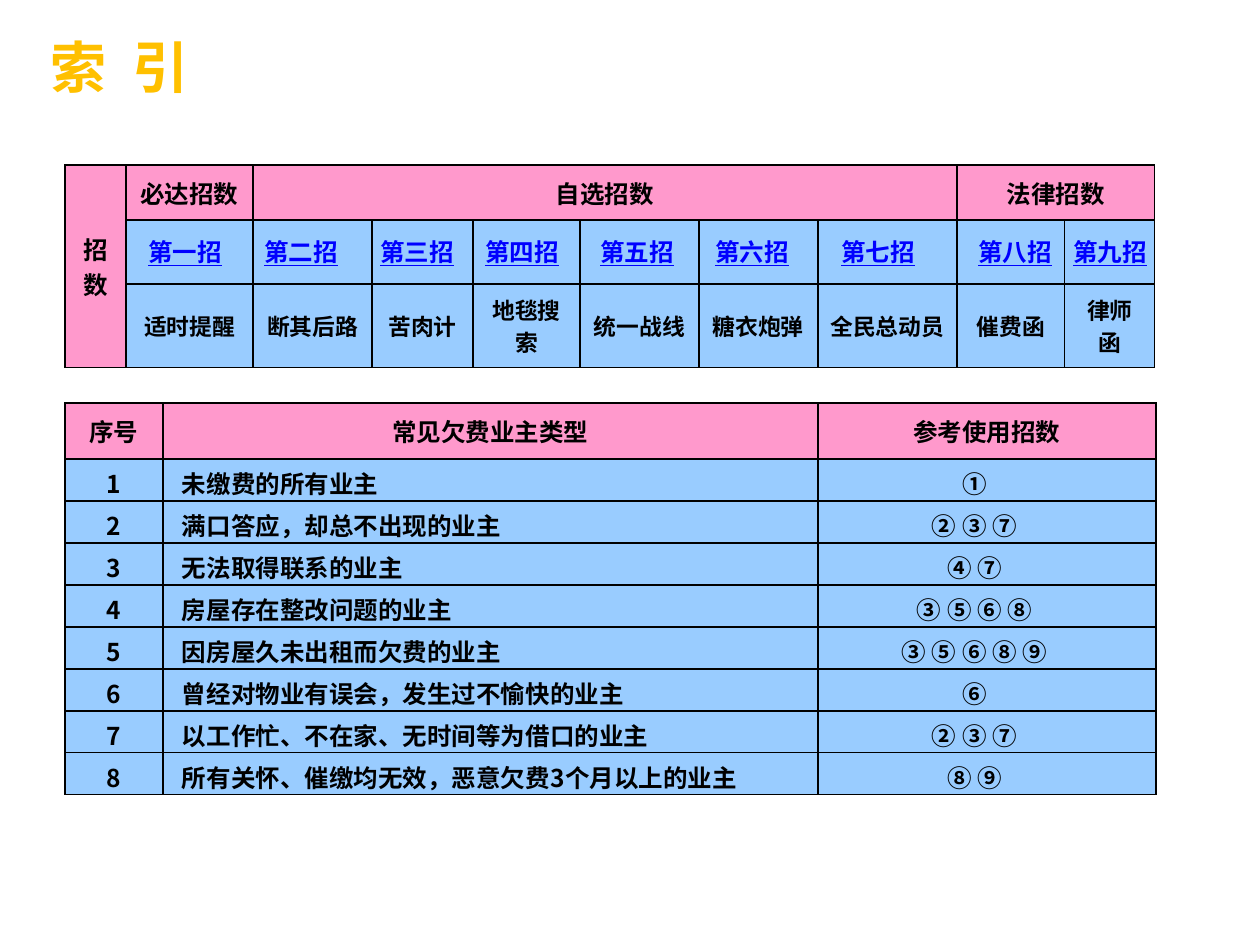
from lxml.etree import SubElement
from pptx import Presentation
from pptx.dml.color import RGBColor
from pptx.enum.text import MSO_ANCHOR as Anchor, MSO_AUTO_SIZE as AutoSize, PP_ALIGN as Align
from pptx.oxml.ns import qn
from pptx.util import Pt

EMU_PER_PX = 914400 / 126
COLORS = {"ink": "000000", "head": "FF99CC", "body": "99CCFF", "link": "0000FF", "title": "FFC000"}
CJK, LATIN = "Noto Sans CJK SC", "Times New Roman"
HEAD = {"color": "head"}
PAD = {"margin_left": 12, "margin_right": 12, "margin_top": 6, "margin_bottom": 6}

MOVES = ["适时提醒", "断其后路", "苦肉计", "地毯搜索", "统一战线",
         "糖衣炮弹", "全民总动员", "催费函", "律师函"]
LINKS = {"第一招": 136, "第二招": 252, "第三招": 368, "第四招": 473, "第五招": 588,
         "第六招": 703, "第七招": 829, "第八招": 966, "第九招": 1061}
OWNERS = [
    ("未缴费的所有业主", "①"),
    ("满口答应，却总不出现的业主", "② ③ ⑦"),
    ("无法取得联系的业主", "④ ⑦"),
    ("房屋存在整改问题的业主", "③ ⑤ ⑥ ⑧"),
    ("因房屋久未出租而欠费的业主", "③ ⑤ ⑥ ⑧ ⑨"),
    ("曾经对物业有误会，发生过不愉快的业主", "⑥"),
    ("以工作忙、不在家、无时间等为借口的业主", "② ③ ⑦"),
    ("所有关怀、催缴均无效，恶意欠费3个月以上的业主", "⑧ ⑨"),
]


def px(n):
    return round(n * EMU_PER_PX)


def rgb(name):
    return RGBColor.from_string(COLORS[name])


def set_margins(obj, margins):
    for name, value in margins.items():
        setattr(obj, name, px(value))


def write(tf, text, size=14, color="ink", latin=CJK, align=Align.CENTER, underline=False):
    p = tf.paragraphs[0]
    p.alignment = align
    r = p.add_run()
    r.text = text
    formats = {"size": Pt(size), "bold": True, "name": latin, "underline": underline}
    for name, value in formats.items():
        setattr(r.font, name, value)
    r.font.color.rgb = rgb(color)
    rPr = r.font._element
    SubElement(rPr, qn("a:ea")).set("typeface", CJK)
    return rPr


def add_borders(cell):
    tcPr = cell._tc.get_or_add_tcPr()
    for side in ("lnL", "lnR", "lnT", "lnB"):
        ln = SubElement(tcPr, qn(f"a:{side}"), w=str(Pt(1)))
        fill = SubElement(ln, qn("a:solidFill"))
        SubElement(fill, qn("a:srgbClr"), val=COLORS["ink"])


def add_grid(slide, left, top, cols, rows):
    """Add a bordered table filled with the body colour."""
    table = slide.shapes.add_table(len(rows), len(cols), px(left), px(top),
                                   px(sum(cols)), px(sum(rows))).table
    for col, width in zip(table.columns, cols):
        col.width = px(width)
    for row, height in zip(table.rows, rows):
        row.height = px(height)
    for cell in table.iter_cells():
        add_borders(cell)
        paint(cell, "body")
        cell.vertical_anchor = Anchor.MIDDLE
        set_margins(cell, PAD)
    return table


def paint(cell, color):
    cell.fill.solid()
    cell.fill.fore_color.rgb = rgb(color)


def add_title(slide, left, top, width, height):
    s = slide.shapes.title
    s.left, s.top, s.width, s.height = map(px, (left, top, width, height))
    tf = s.text_frame
    tf.auto_size, tf.vertical_anchor = AutoSize.NONE, Anchor.MIDDLE
    set_margins(tf, {**PAD, "margin_left": 50})
    write(tf, "索 引", 32, "title", LATIN, Align.LEFT).set("spc", "400")


def add_moves(slide, left, top):
    cols = [61, 127, 119, 101, 107, 119, 119, 139, 108, 90]
    table = add_grid(slide, left, top, cols, [55, 64, 79])
    heads = [("招数", 0, 2, 0), ("必达招数", 1, 0, 1), ("自选招数", 2, 0, 7), ("法律招数", 8, 0, 9)]
    for text, first, last_row, last in heads:
        cell = table.cell(0, first)
        if (last_row, last) != (0, first):
            cell.merge(table.cell(last_row, last))
        paint(cell, "head")
        write(cell.text_frame, text)
    for i, move in enumerate(MOVES, 1):
        write(table.cell(2, i).text_frame, move, 13)
    for text, x in LINKS.items():
        box = slide.shapes.add_textbox(px(x), px(top + 66), px(100), px(43))
        box.text_frame.word_wrap = True
        write(box.text_frame, text, 14, "link", LATIN, Align.LEFT, True)


def add_owners(slide, left, top):
    table = add_grid(slide, left, top, [98, 655, 338], [56] + [42] * len(OWNERS))
    for i, text in enumerate(("序号", "常见欠费业主类型", "参考使用招数")):
        paint(table.cell(0, i), "head")
        write(table.cell(0, i).text_frame, text)
    for n, (owner, moves) in enumerate(OWNERS, 1):
        aligns = (Align.CENTER, Align.LEFT, Align.CENTER)
        for i, (text, align) in enumerate(zip((str(n), owner, moves), aligns)):
            cell = table.cell(n, i)
            cell.margin_bottom = 0
            write(cell.text_frame, text, align=align)
        table.cell(n, 1).margin_left = px(19)
        table.cell(n, 2).margin_right = px(37)


def main():
    prs = Presentation()
    prs.slide_width, prs.slide_height = px(1260), px(945)
    slide = prs.slides.add_slide(prs.slide_layouts[5])
    add_title(slide, 0, 26, 1142, 81)
    add_moves(slide, 65, 165)
    add_owners(slide, 65, 403)
    prs.save("out.pptx")


if __name__ == "__main__":
    main()
